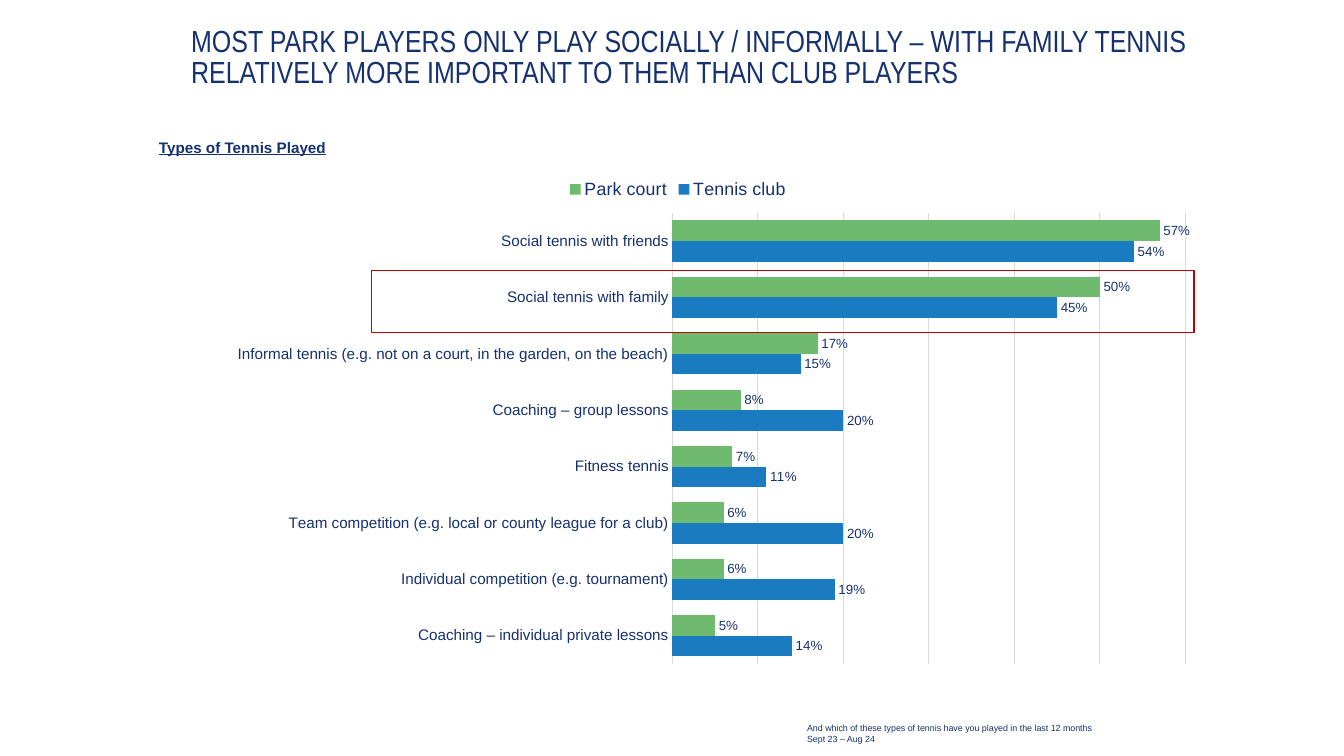
from dataclasses import dataclass

from lxml.etree import SubElement
from pptx import Presentation
from pptx.chart.chart import Chart
from pptx.chart.data import CategoryChartData
from pptx.dml.color import RGBColor
from pptx.enum.chart import XL_CHART_TYPE, XL_LABEL_POSITION, XL_LEGEND_POSITION, XL_TICK_LABEL_POSITION, XL_TICK_MARK
from pptx.enum.shapes import MSO_SHAPE
from pptx.enum.text import MSO_ANCHOR, PP_ALIGN
from pptx.oxml.ns import qn
from pptx.slide import Slide
from pptx.text.text import Font, TextFrame
from pptx.util import Inches, Length, Pt


@dataclass(frozen=True)
class Theme:
    navy: str = "16316F"
    blue: str = "1A7BC0"
    green: str = "6EBA6F"
    grid: str = "D9D9D9"
    highlight: str = "C00000"
    heading_font: str = "Arial Narrow"
    body_font: str = "Arial"
    title_size: float = 24
    legend_size: float = 14
    body_size: float = 12
    label_size: float = 10.5
    chart_size: float = 9
    note_size: float = 7


@dataclass(frozen=True)
class Area:
    """A rectangle in columns and rows of the slide grid."""
    column: float
    row: float
    columns: float
    rows: float

    def bounds(self) -> tuple[Length, ...]:
        return tuple(Inches(cells * CELL) for cells in (self.column, self.row, self.columns, self.rows))


@dataclass(frozen=True)
class TextBlock:
    area: Area
    lines: tuple[str, ...]
    size: float
    emphasis: bool = False


@dataclass(frozen=True)
class Series:
    name: str
    color: str
    values: tuple[float, ...]


THEME = Theme()
CELL = 0.1  # inches per grid column and row
SLIDE = Area(0, 0, 147, 82.7)
TITLE_AREA = Area(20.9, 3, 115.6, 6.9)
CHART_AREA = Area(14.2, 18.5, 119.9, 55.7)
FAMILY_AREA = Area(40.6, 29.6, 90, 6.8)
PLOT_SHARES = {"x": 0.495, "y": 0.086, "w": 0.468, "h": 0.886}

TITLE = (
    "MOST PARK PLAYERS ONLY PLAY SOCIALLY / INFORMALLY – WITH FAMILY TENNIS "
    "RELATIVELY MORE IMPORTANT TO THEM THAN CLUB PLAYERS"
)
TEXT_BLOCKS = (
    TextBlock(Area(16.4, 14.6, 43.7, 3), ("Types of Tennis Played",), THEME.body_size, emphasis=True),
    TextBlock(
        Area(87.3, 78.6, 41.4, 3.4),
        ("And which of these types of tennis have you played in the last 12 months", "Sept 23 – Aug 24"),
        THEME.note_size,
    ),
)
TENNIS_TYPES = (
    "Coaching – individual private lessons",
    "Individual competition (e.g. tournament)",
    "Team competition (e.g. local or county league for a club)",
    "Fitness tennis",
    "Coaching – group lessons",
    "Informal tennis (e.g. not on a court, in the garden, on the beach)",
    "Social tennis with family",
    "Social tennis with friends",
)
PLAYER_GROUPS = (
    Series("Tennis club", THEME.blue, (0.14, 0.19, 0.2, 0.11, 0.2, 0.15, 0.45, 0.54)),
    Series("Park court", THEME.green, (0.05, 0.06, 0.06, 0.07, 0.08, 0.17, 0.5, 0.57)),
)


def style_font(font: Font, size: float, name: str = THEME.body_font) -> None:
    font.size = Pt(size)
    font.name = name
    font.color.rgb = RGBColor.from_string(THEME.navy)


def clear_margins(frame: TextFrame) -> None:
    frame.margin_left = frame.margin_top = frame.margin_right = frame.margin_bottom = 0


def add_title(slide: Slide) -> None:
    box = slide.shapes.title
    box.left, box.top, box.width, box.height = TITLE_AREA.bounds()
    frame = box.text_frame
    frame.word_wrap = True
    frame.vertical_anchor = MSO_ANCHOR.TOP
    clear_margins(frame)
    para = frame.paragraphs[0]
    para.alignment = PP_ALIGN.LEFT
    para.line_spacing = 0.85
    para.space_before = Pt(0)
    span = para.add_run()
    span.text = TITLE
    style_font(span.font, THEME.title_size, THEME.heading_font)


def add_text_block(slide: Slide, block: TextBlock) -> None:
    frame = slide.shapes.add_textbox(*block.area.bounds()).text_frame
    frame.word_wrap = True
    for index, line in enumerate(block.lines):
        para = frame.add_paragraph() if index else frame.paragraphs[0]
        span = para.add_run()
        span.text = line
        style_font(span.font, block.size)
        if block.emphasis:
            span.font.bold = span.font.underline = True


def set_plot_layout(chart: Chart) -> None:
    """Fix the inner plot area at its shares of the chart."""
    plot_area = chart.plots[0]._element.getparent()
    layout = plot_area.find(qn("c:layout"))
    if layout is None:
        layout = SubElement(plot_area, qn("c:layout"))
        plot_area.insert(0, layout)
    manual = SubElement(layout, qn("c:manualLayout"))
    settings = {"layoutTarget": "inner", "xMode": "edge", "yMode": "edge", **PLOT_SHARES}
    for tag, value in settings.items():
        SubElement(manual, qn(f"c:{tag}")).set("val", str(value))


def style_axes(chart: Chart) -> None:
    categories = chart.category_axis
    categories.major_tick_mark = XL_TICK_MARK.NONE
    categories.minor_tick_mark = XL_TICK_MARK.NONE
    categories.tick_label_position = XL_TICK_LABEL_POSITION.NEXT_TO_AXIS
    style_font(categories.tick_labels.font, THEME.body_size)
    values = chart.value_axis
    values.minimum_scale, values.maximum_scale, values.major_unit = 0, 0.6, 0.1
    values.has_major_gridlines = True
    values.visible = False
    for line in (categories.format.line, values.major_gridlines.format.line):
        line.color.rgb = RGBColor.from_string(THEME.grid)
        line.width = Pt(0.75)


def add_tennis_chart(slide: Slide) -> None:
    data = CategoryChartData(number_format="0%")
    data.categories = TENNIS_TYPES
    for group in PLAYER_GROUPS:
        data.add_series(group.name, group.values)
    chart = slide.shapes.add_chart(XL_CHART_TYPE.BAR_CLUSTERED, *CHART_AREA.bounds(), data).chart
    style_font(chart.font, THEME.chart_size)
    chart.has_title = False
    chart.has_legend = True
    chart.legend.position = XL_LEGEND_POSITION.TOP
    chart.legend.include_in_layout = False
    style_font(chart.legend.font, THEME.legend_size)
    plot = chart.plots[0]
    plot.gap_width, plot.overlap, plot.vary_by_categories = 74, 0, False
    for series, group in zip(plot.series, PLAYER_GROUPS):
        series.format.fill.solid()
        series.format.fill.fore_color.rgb = RGBColor.from_string(group.color)
        labels = series.data_labels
        labels.show_value = True
        labels.number_format = "0%"
        labels.number_format_is_linked = False
        labels.position = XL_LABEL_POSITION.OUTSIDE_END
        style_font(labels.font, THEME.label_size)
    style_axes(chart)
    set_plot_layout(chart)


def add_family_highlight(slide: Slide) -> None:
    box = slide.shapes.add_shape(MSO_SHAPE.RECTANGLE, *FAMILY_AREA.bounds())
    box.shadow.inherit = False
    box.fill.background()
    box.line.color.rgb = RGBColor.from_string(THEME.highlight)
    box.line.width = Pt(1)


def main() -> None:
    deck = Presentation()
    deck.slide_width, deck.slide_height = SLIDE.bounds()[2:]
    page = deck.slides.add_slide(deck.slide_layouts.get_by_name("Title Only"))
    add_title(page)
    add_tennis_chart(page)
    for block in TEXT_BLOCKS:
        add_text_block(page, block)
    add_family_highlight(page)
    deck.save("out.pptx")


if __name__ == "__main__":
    main()
